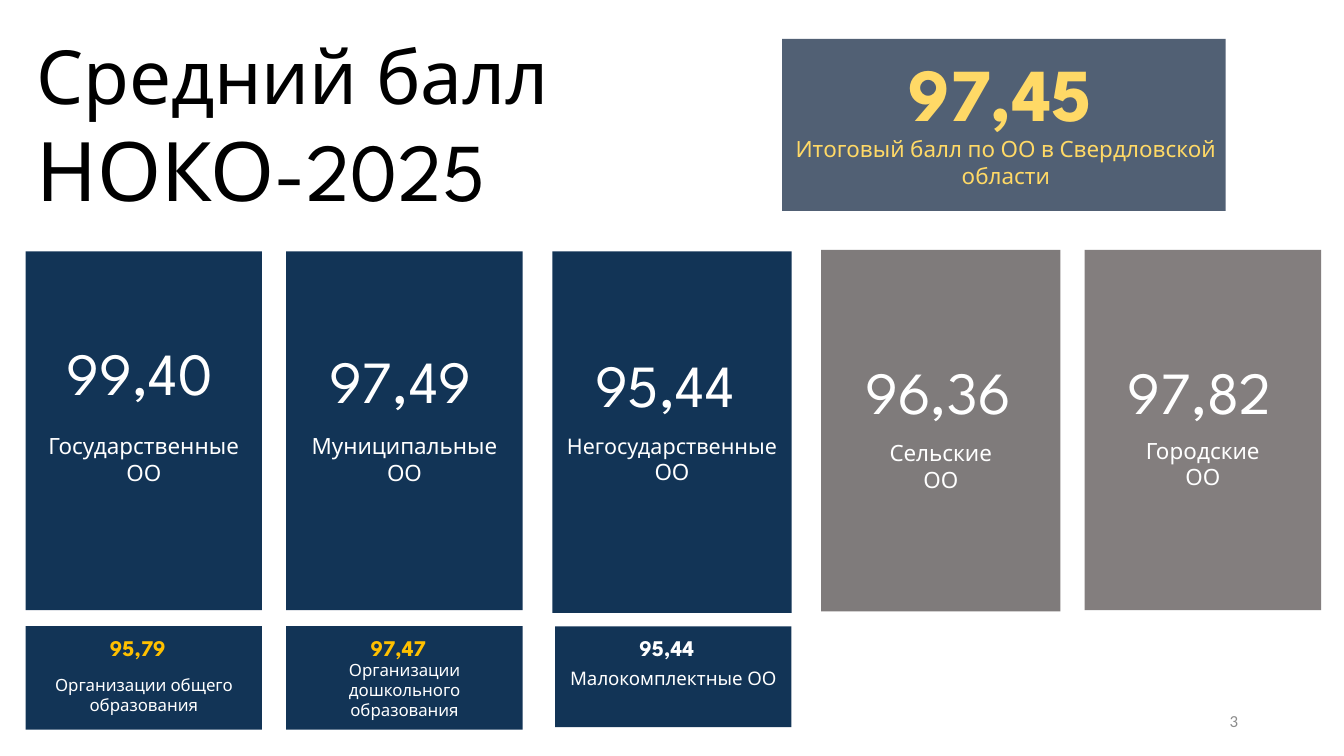
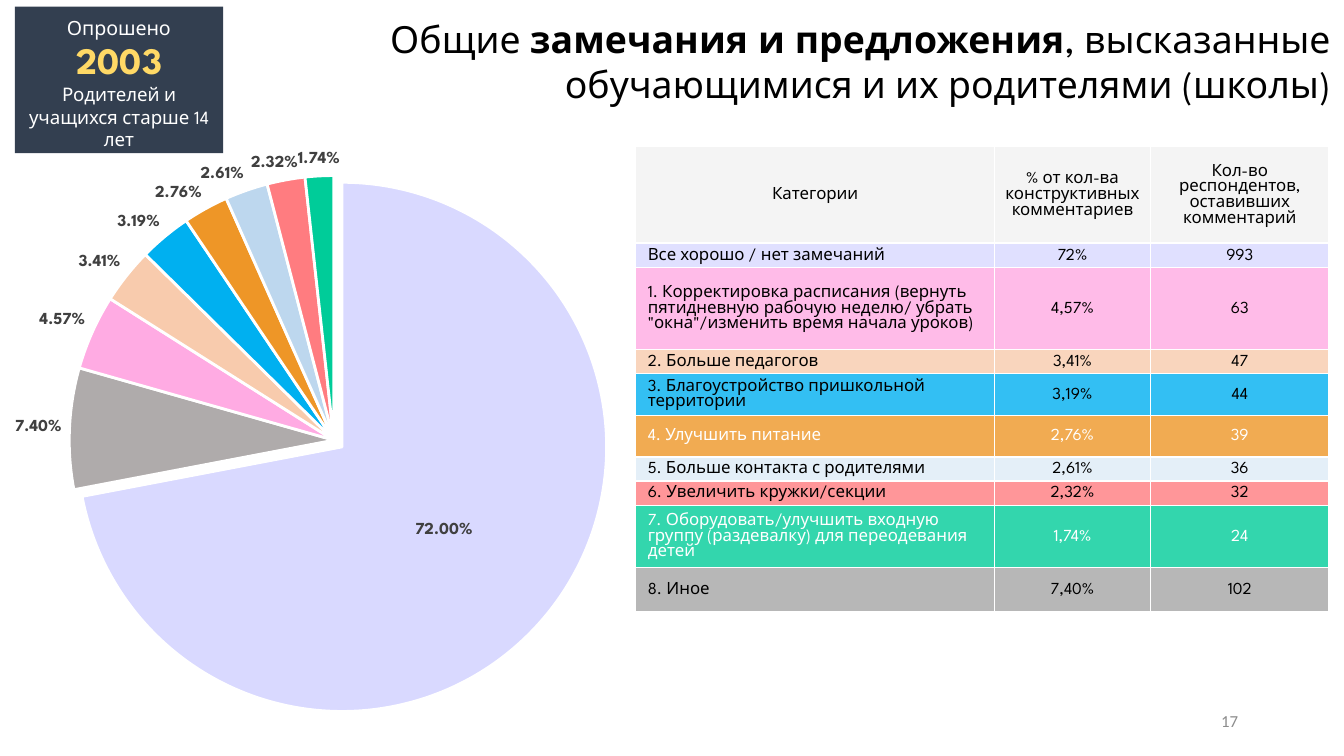
from dataclasses import dataclass

from lxml.etree import SubElement
from pptx import Presentation
from pptx.chart.data import CategoryChartData
from pptx.dml.color import RGBColor
from pptx.enum.chart import XL_CHART_TYPE as ChartType, XL_LABEL_POSITION as LabelPosition
from pptx.enum.shapes import MSO_SHAPE as Preset
from pptx.enum.text import MSO_ANCHOR as Anchor, MSO_AUTO_SIZE as AutoSize, PP_ALIGN as Align
from pptx.oxml import parse_xml
from pptx.oxml.ns import nsdecls, qn
from pptx.util import Inches, Pt


@dataclass(frozen=True)
class Theme:
    font: str = "League Spartan"
    number_font: str = "Calibri"
    black: str = "000000"
    white: str = "FFFFFF"
    navy: str = "00254A"
    gray: str = "767171"
    slate: str = "44546A"
    dark: str = "333F50"
    gold: str = "FFD966"
    amber: str = "FFC000"
    page_number: str = "8C8C8C"
    chart_label: str = "404040"
    header: str = "F2F2F2"
    title_large: float = 44
    title: float = 40
    score: float = 32
    title_small: float = 20
    caption: float = 12
    caption_narrow: float = 11.5
    note_large: float = 10.5
    note: float = 10
    small: float = 9


THEME = Theme()


@dataclass(frozen=True)
class Text:
    text: str
    size: float
    color: str = THEME.white
    bold: bool = False
    font: str = THEME.font


SCORE_CARDS = [
    ((0.19, 1.87, 1.76, 2.67), THEME.navy, 93, "99,40", (0.4, 2.45, 1.34, 0.64),
     3.17, [[Text("Государственные ОО", THEME.caption)]]),
    ((2.13, 1.87, 1.76, 2.67), THEME.navy, 93, "97,49", (2.35, 2.51, 1.32, 0.64),
     3.17, [[Text("Муниципальные ОО", THEME.caption)]]),
    ((4.11, 1.87, 1.78, 2.69), THEME.navy, 93, "95,44", (4.33, 2.54, 1.45, 0.48),
     3.17, [[Text("Негосударственные ", THEME.caption_narrow), Text("ОО", THEME.caption)]]),
    ((6.11, 1.86, 1.78, 2.69), THEME.gray, 93, "96,36", (6.34, 2.59, 1.32, 0.64),
     3.22, [[Text("Сельские", THEME.caption)], [Text("ОО", THEME.caption)]]),
    ((8.07, 1.86, 1.76, 2.68), THEME.gray, 90, "97,82", (8.29, 2.59, 1.45, 0.64),
     3.2, [[Text("Городские", THEME.caption)], [Text("ОО", THEME.caption)]]),
]

SMALL_CARDS = [
    (0.19, 0.77, "95,79", THEME.amber, 4.97, "Организации общего образования", THEME.small),
    (2.13, 0.77, "97,47", THEME.amber, 4.86, "Организации дошкольного образования", THEME.small),
    (4.13, 0.75, "95,44", THEME.white, 4.91, "Малокомплектные ОО", THEME.note),
]

TABLE_HEADER = ("Категории", "% от кол-ва конструктивных комментариев",
                "Кол-во респондентов, оставивших комментарий")
COMMENT_ROWS = [
    ("Все хорошо / нет замечаний", "72%", "993", "D9D9FF", THEME.black, 0.18),
    ('1. Корректировка расписания (вернуть пятидневную рабочую неделю/ убрать '
     '"окна"/изменить время начала уроков)', "4,57%", "63", "FFABE3", THEME.black, 0.61),
    ("2. Больше педагогов", "3,41%", "47", "F8CBAD", THEME.black, 0.18),
    ("3. Благоустройство пришкольной территории", "3,19%", "44", "00B0F0", THEME.black, 0.31),
    ("4. Улучшить питание", "2,76%", "39", "EE9627", THEME.white, 0.31),
    ("5. Больше контакта с родителями", "2,61%", "36", "DEEBF7", THEME.black, 0.18),
    ("6. Увеличить кружки/секции", "2,32%", "32", "FF7C80", THEME.black, 0.18),
    ("7. Оборудовать/улучшить входную группу (раздевалку) для переодевания детей",
     "1,74%", "24", "00CC99", THEME.white, 0.46),
    ("8. Иное", "7,40%", "102", "A6A6A6", THEME.black, 0.33),
]
PIE_SLICES = [
    (0.72, "D9D9FF"), (0.074, "AFABAB"), (0.0457, "FFABE3"),
    (0.0341, "F8CBAD"), (0.0319, "00B0F0"), (0.0276, "EE9627"),
    (0.0261, "BDD7EE"), (0.0232, "FF7C80"), (0.0174, "00CC99"),
]
PERCENT = "0.00%"
PLACED_LABELS = (LabelPosition.CENTER, LabelPosition.OUTSIDE_END, LabelPosition.OUTSIDE_END)


def inches(box):
    return [Inches(length) for length in box]


def style_font(font, size, color, bold=False, name=THEME.font):
    font.name = name
    font.size = Pt(size)
    font.bold = bold
    font.color.rgb = RGBColor.from_string(color)


def write_text(frame, lines, align):
    for index, line in enumerate(lines):
        paragraph = frame.add_paragraph() if index else frame.paragraphs[0]
        paragraph.alignment = align
        for part in line:
            run = paragraph.add_run()
            run.text = part.text
            style_font(run.font, part.size, part.color, part.bold, part.font)


def paint(fill, properties, color, opacity=100):
    fill.solid()
    fill.fore_color.rgb = RGBColor.from_string(color)
    if opacity < 100:
        color_element = properties.find(qn("a:solidFill")).find(qn("a:srgbClr"))
        SubElement(color_element, qn("a:alpha"), val=str(opacity * 1000))


def add_title(slide, box, lines, align):
    title = slide.shapes.title
    title.left, title.top, title.width, title.height = inches(box)
    frame = title.text_frame
    frame.word_wrap = True
    frame.auto_size = AutoSize.SHAPE_TO_FIT_TEXT
    frame.vertical_anchor = Anchor.TOP
    write_text(frame, lines, align)


def add_label(shapes, box, lines, align=Align.CENTER, wrap=True):
    frame = shapes.add_textbox(*inches(box)).text_frame
    frame.word_wrap = wrap
    frame.auto_size = AutoSize.SHAPE_TO_FIT_TEXT
    write_text(frame, lines, align)


def add_panel(slide, box, color, opacity=100):
    shapes = slide.shapes.add_group_shape().shapes
    panel = shapes.add_shape(Preset.RECTANGLE, *inches(box))
    panel.shadow.inherit = False
    panel.line.fill.background()
    paint(panel.fill, panel._element.spPr, color, opacity)
    return shapes


def add_page_number(slide, number):
    frame = slide.shapes.add_textbox(*inches((7.06, 5.21, 2.25, 0.3))).text_frame
    frame.word_wrap = True
    frame.vertical_anchor = Anchor.MIDDLE
    text = Text(number, THEME.small, THEME.page_number, font=THEME.number_font)
    write_text(frame, [[text]], Align.RIGHT)


def add_pie(slide):
    data = CategoryChartData()
    data.categories = [str(number) for number in range(1, len(PIE_SLICES) + 1)]
    data.add_series("Series 1", [value for value, _ in PIE_SLICES])
    chart = slide.shapes.add_chart(ChartType.PIE, *inches((0, 0.95, 7.68, 4.82)), data).chart
    chart.has_title = False
    chart.has_legend = False
    style_font(chart.font, THEME.note, THEME.black)
    plot = chart.plots[0]
    plot.vary_by_categories = True
    series = plot.series[0]
    for index, (_, color) in enumerate(PIE_SLICES):
        slice_format = series.points[index].format
        paint(slice_format.fill, None, color)
        slice_format.line.color.rgb = RGBColor.from_string(THEME.white)
        slice_format.line.width = Pt(1.5)
    first_slice = series._element.find(qn("c:dPt"))
    first_slice.find(qn("c:spPr")).addprevious(
        parse_xml(f'<c:explosion {nsdecls("c")} val="4"/>'))
    label_slices(series)
    place_plot(chart, {"x": 0.063, "y": 0.074, "w": 0.521, "h": 0.817})


def label_slices(series):
    labels = series.data_labels
    labels.show_value = True
    labels.number_format = PERCENT
    labels.number_format_is_linked = False
    labels.position = LabelPosition.BEST_FIT
    style_font(labels.font, THEME.small, THEME.chart_label, True)
    for index, position in enumerate(PLACED_LABELS):
        label = series.points[index].data_label
        label.position = position
        style_font(label.font, THEME.small, THEME.chart_label, True)
    for element in labels._element.findall(qn("c:dLbl")):
        element.insert(1, parse_xml(
            f'<c:numFmt {nsdecls("c")} formatCode="{PERCENT}" sourceLinked="0"/>'))


def place_plot(chart, position):
    plot_area = chart._chartSpace.chart.plotArea
    for layout in plot_area.findall(qn("c:layout")):
        plot_area.remove(layout)
    modes = '<c:layoutTarget val="inner"/><c:xMode val="edge"/><c:yMode val="edge"/>'
    values = "".join(f'<c:{key} val="{value}"/>' for key, value in position.items())
    plot_area.insert(0, parse_xml(
        f'<c:layout {nsdecls("c")}><c:manualLayout>{modes}{values}</c:manualLayout></c:layout>'))


def fill_cell(cell, text, fill, color, align, indent=0):
    cell.vertical_anchor = Anchor.MIDDLE
    cell.margin_left = cell.margin_right = cell.margin_top = Inches(0.01)
    cell.margin_bottom = 0
    write_text(cell.text_frame, [[Text(text, THEME.small, color)]], align)
    if indent:
        properties = cell.text_frame.paragraphs[0]._p.get_or_add_pPr()
        properties.set("marL", str(Inches(indent)))
        properties.set("indent", "0")
    properties = cell._tc.get_or_add_tcPr()
    paint(cell.fill, properties, fill, 80)
    for index, side in enumerate(("lnL", "lnR", "lnT", "lnB")):
        properties.insert(index, parse_xml(
            f'<a:{side} {nsdecls("a")} w="{Pt(1)}"><a:solidFill>'
            f'<a:srgbClr val="{THEME.white}"/></a:solidFill></a:{side}>'))


def add_comment_table(slide):
    table = slide.shapes.add_table(
        len(COMMENT_ROWS) + 1, 3, *inches((4.73, 1.09, 5.17, 3.45))).table
    table.first_row = False
    table.horz_banding = False
    for column, width in zip(table.columns, (2.67, 1.16, 1.33)):
        column.width = Inches(width)
    rows = [(*TABLE_HEADER, THEME.header, THEME.black, 0.72), *COMMENT_ROWS]
    for row_index, (*texts, fill, color, height) in enumerate(rows):
        table.rows[row_index].height = Inches(height)
        for column_index, text in enumerate(texts):
            category = row_index > 0 and column_index == 0
            fill_cell(table.cell(row_index, column_index), text, fill, color,
                      Align.LEFT if category else Align.CENTER, 0.08 if category else 0)


def build_scores(slide):
    add_title(slide, (0.17, 0.17, 4.45, 1.51), [
        [Text("Средний балл", THEME.title, THEME.black)],
        [Text("НОКО-2025", THEME.title_large, THEME.black)],
    ], Align.LEFT)
    total = add_panel(slide, (5.82, 0.29, 3.3, 1.28), THEME.slate, 93)
    add_label(total, (6.66, 0.3, 1.67, 0.77),
              [[Text("97,45", THEME.title, THEME.gold, True)]], Align.LEFT)
    add_label(total, (5.5, 0.96, 3.97, 0.5),
              [[Text("Итоговый балл по ОО в Свердловской области", THEME.caption, THEME.gold)]])
    for box, color, opacity, score, score_box, caption_top, caption in SCORE_CARDS:
        card = add_panel(slide, box, color, opacity)
        add_label(card, score_box, [[Text(score, THEME.score)]], Align.LEFT, wrap=False)
        add_label(card, (box[0], caption_top, box[2], 0.5), caption)
    for left, height, score, color, caption_top, caption, size in SMALL_CARDS:
        card = add_panel(slide, (left, 4.66, 1.76, height), THEME.navy, 93)
        add_label(card, (left + 0.53, 4.67, 0.63, 0.3),
                  [[Text(score, THEME.caption, color, True)]], Align.LEFT, wrap=False)
        add_label(card, (left, caption_top, 1.76, 0.5), [[Text(caption, size)]])
    add_page_number(slide, "3")


def build_comments(slide):
    add_title(slide, (1.97, 0.07, 8.03, 0.77), [[
        Text("Общие ", THEME.title_small, THEME.black),
        Text("замечания и предложения", THEME.title_small, THEME.black, True),
        Text(", высказанные обучающимися и их родителями (школы)",
             THEME.title_small, THEME.black),
    ]], Align.RIGHT)
    badge = add_panel(slide, (0.11, 0.05, 1.55, 1.09), THEME.dark)
    add_label(badge, (0.47, 0.23, 0.91, 0.44),
              [[Text("2003 ", THEME.title_small, THEME.gold, True)]], wrap=False)
    add_label(badge, (0.11, 0.57, 1.55, 0.52),
              [[Text("Родителей и учащихся старше 14 лет", THEME.note)]])
    add_label(badge, (0.11, 0.07, 1.55, 0.25), [[Text("Опрошено", THEME.note_large)]])
    add_page_number(slide, "17")
    add_pie(slide)
    add_comment_table(slide)


def main():
    presentation = Presentation()
    presentation.slide_width = Inches(10)
    presentation.slide_height = Inches(10 * 9 / 16)
    for build in (build_scores, build_comments):
        build(presentation.slides.add_slide(presentation.slide_layouts.get_by_name("Title Only")))
    presentation.save("out.pptx")


if __name__ == "__main__":
    main()
